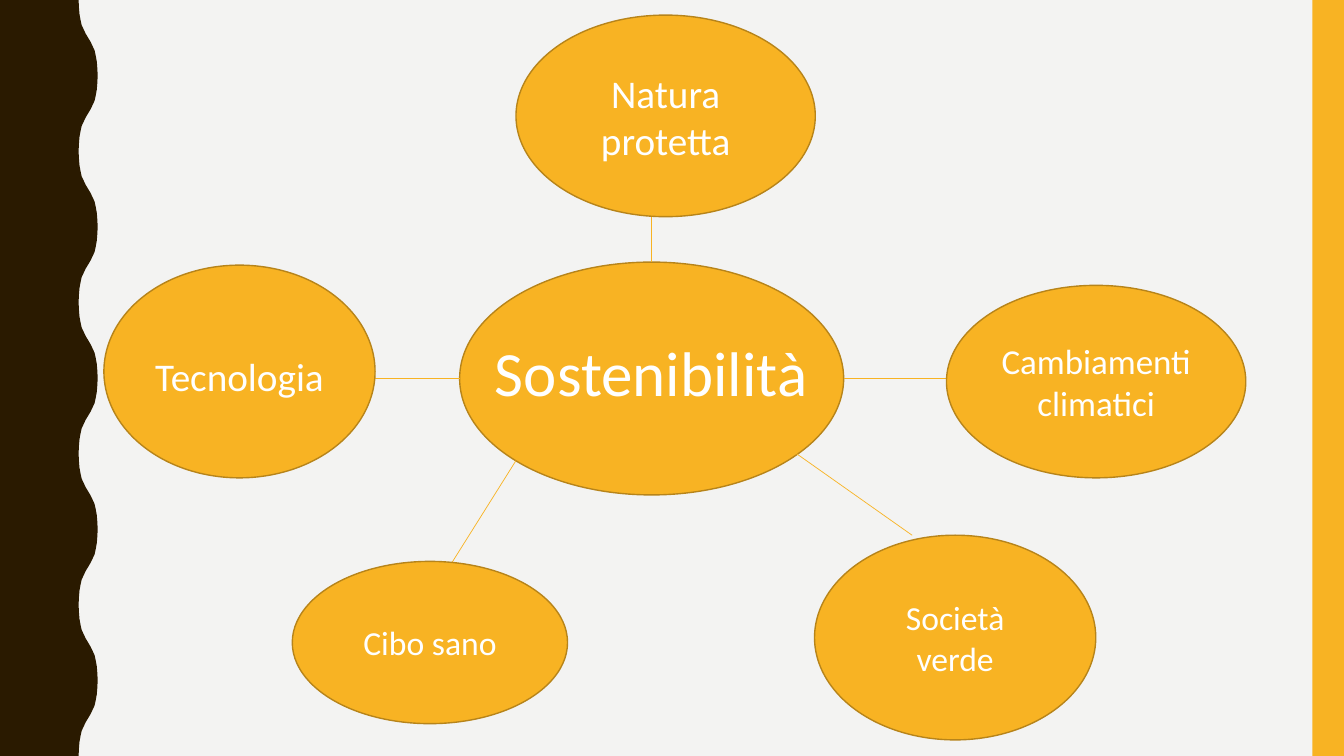
import pptx
import pptx.dml.color
import pptx.enum.shapes
import pptx.enum.text
import pptx.util
import lxml.etree
from dataclasses import dataclass

Pt = pptx.util.Pt
ShapeKind = pptx.enum.shapes.MSO_SHAPE


@dataclass(frozen=True)
class Theme:
    font: str = "Calibri"
    paper: str = "F3F3F2"
    dark: str = "2A1A00"
    accent: str = "F8B323"
    outline: str = "B7841A"
    text: str = "FFFFFF"
    hub_size: float = 45
    large: float = 28
    medium: float = 25
    small: float = 24


THEME = Theme()
PAGE_BOX = (0, 0, 960, 540)

# One quarter of a wave: distance down, distance out from the trough
WAVE_QUARTER = [(0, 0), (5, 0.2), (10, 0.6), (14.4, 1.4), (18, 2.2),
                (21, 3.6), (24, 5), (27, 6.8)]
WAVE_PERIOD, WAVE_DEPTH, WAVE_COUNT = 108, 13.6, 5

HUB_BOX = (328.3, 187.2, 274.3, 166.3)

# Label, box, type size, extra space above the text
TOPICS = [
    ("Natura protetta", (368.6, 10.8, 213.8, 144), THEME.large, 0),
    ("Cambiamenti climatici", (676.1, 203.8, 213.8, 137.5), THEME.medium, 0),
    ("Società verde", (581.8, 382.3, 200.9, 146.2), THEME.small, 0),
    ("Cibo sano", (208.8, 401, 196.6, 115.9), THEME.small, 0),
    ("Tecnologia", (74.2, 189.4, 193.7, 151.9), THEME.large, 6),
]

# Link ends, from the hub's centre
LINKS = [
    ((-137.2, 0), (-228.6, 0)),
    ((137.2, 0), (235.8, 0)),
    ((0, -135.7), (0, -83.1)),
    ((-96.9, 58.7), (-148, 140.1)),
    ((100.4, 51.5), (186.1, 112)),
]


def color(value):
    return pptx.dml.color.RGBColor.from_string(value)


def paint(shape, fill, outline=None):
    shape.shadow.inherit = False
    shape.fill.solid()
    shape.fill.fore_color.rgb = color(fill)
    if outline:
        shape.line.color.rgb = color(outline)
        shape.line.width = Pt(1)
    else:
        shape.line.fill.background()


def add_preset(page, kind, box, fill, outline=None):
    shape = page.shapes.add_shape(kind, *map(Pt, box))
    paint(shape, fill, outline)
    return shape


def write(frame, words, size):
    frame.word_wrap = True
    para = frame.paragraphs[0]
    para.text = words
    para.alignment = pptx.enum.text.PP_ALIGN.CENTER
    para.font.name = THEME.font
    para.font.size = Pt(size)
    para.font.color.rgb = color(THEME.text)


def draw_frame(page, box):
    """Wavy band on the left and plain band on the right."""
    left, top, width, height = box
    trough = left + 56.2
    half = WAVE_QUARTER + [(WAVE_PERIOD / 2 - down, WAVE_DEPTH - out)
                           for down, out in WAVE_QUARTER[-2::-1]]
    wave = half + [(WAVE_PERIOD - down, out) for down, out in half[-2::-1]]
    edge = [(Pt(trough + out), Pt(top + turn * WAVE_PERIOD + down))
            for turn in range(WAVE_COUNT) for down, out in wave]
    outline = page.shapes.build_freeform(Pt(left), Pt(top))
    outline.add_line_segments(edge + [(Pt(left), Pt(top + height))])
    paint(outline.convert_to_shape(), THEME.dark)

    band = 22.5
    add_preset(page, ShapeKind.RECTANGLE,
               (left + width - band, top, band, height), THEME.accent)


def draw_links(page, box):
    """Thin lines from the hub to its topics."""
    left, top, width, height = box
    middle_x, middle_y = left + width / 2, top + height / 2
    for start, end in LINKS:
        ends = [Pt(value) for x, y in (start, end)
                for value in (middle_x + x, middle_y + y)]
        link = page.shapes.add_connector(
            pptx.enum.shapes.MSO_CONNECTOR.STRAIGHT, *ends)
        link.line.color.rgb = color(THEME.accent)
        link.line.width = Pt(0.5)
        properties = link._element.spPr
        lxml.etree.SubElement(properties, pptx.oxml.ns.qn("a:effectLst"))


def draw_topic(page, box, words, size, extra_top):
    """Ellipse with a centred label."""
    ellipse = add_preset(page, ShapeKind.OVAL, box, THEME.accent, THEME.outline)
    frame = ellipse.text_frame
    frame.vertical_anchor = pptx.enum.text.MSO_ANCHOR.MIDDLE
    frame.margin_top = Pt(3.6 + extra_top)
    write(frame, words, size)


def draw_hub_label(page, box):
    """Main term, wider than the text area of the hub ellipse."""
    left, top, width, height = box
    label = page.shapes.add_textbox(Pt(left + 9.4), Pt(top + 47.5),
                                    Pt(width - 19.4), Pt(61.9))
    write(label.text_frame, "Sostenibilità", THEME.hub_size)


def main():
    deck = pptx.Presentation()
    deck.slide_width, deck.slide_height = map(Pt, PAGE_BOX[2:])
    page = deck.slides.add_slide(deck.slide_layouts[6])
    page.background.fill.solid()
    page.background.fill.fore_color.rgb = color(THEME.paper)

    draw_frame(page, PAGE_BOX)
    add_preset(page, ShapeKind.OVAL, HUB_BOX, THEME.accent, THEME.outline)
    draw_links(page, HUB_BOX)
    for words, box, size, extra_top in TOPICS:
        draw_topic(page, box, words, size, extra_top)
    draw_hub_label(page, HUB_BOX)
    deck.save("out.pptx")


if __name__ == "__main__":
    main()
